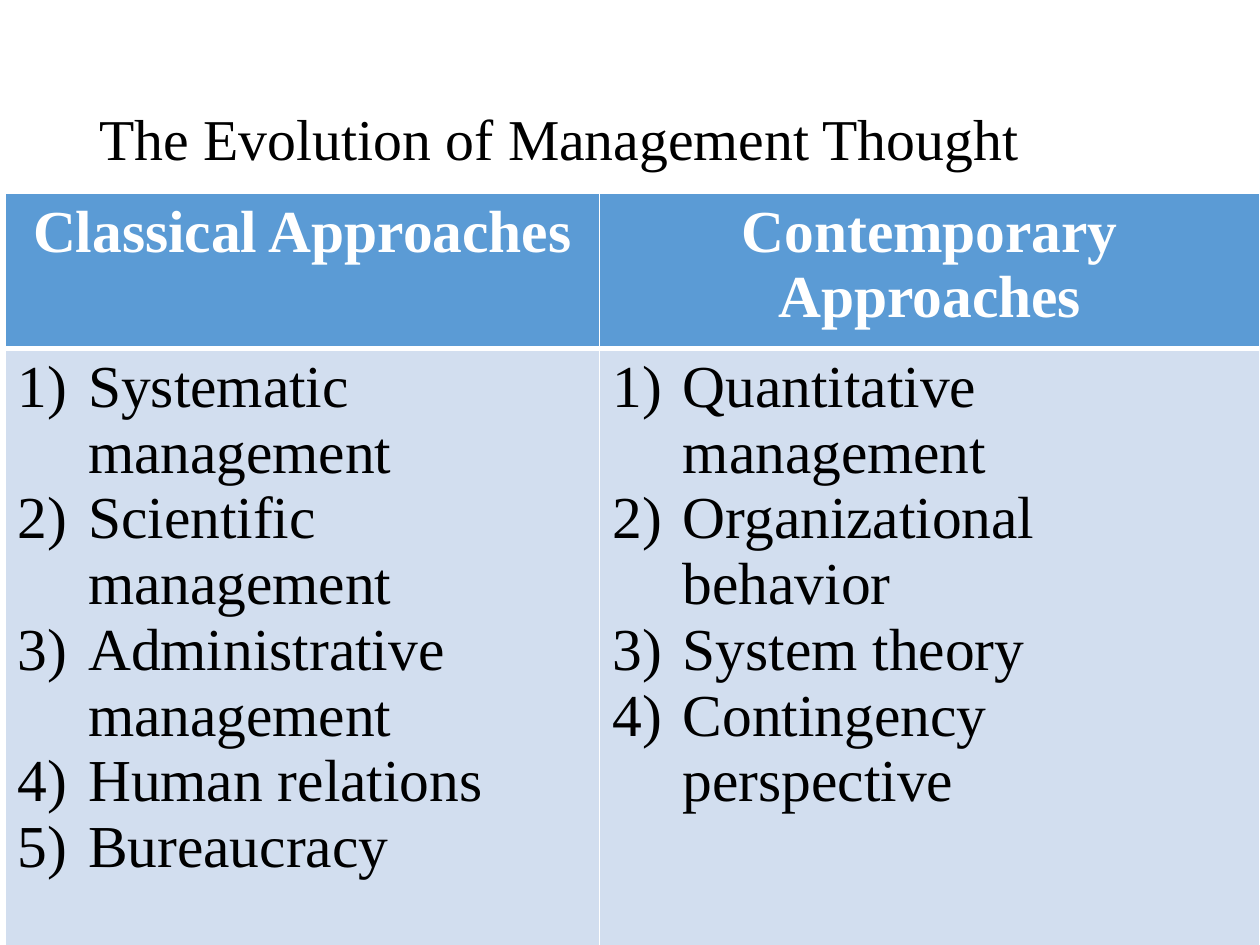
"""Build the slide comparing classical and contemporary management approaches."""
from dataclasses import dataclass

from lxml.etree import SubElement
from pptx import Presentation
from pptx.dml.color import RGBColor
from pptx.enum.text import MSO_ANCHOR, PP_ALIGN
from pptx.oxml.ns import qn
from pptx.util import Inches, Pt

FONT = "Times New Roman"
WHITE, BLACK, HEAD_FILL, BODY_FILL = "FFFFFF", "000000", "5B9BD5", "D2DEEF"
THIN, THICK = 1, 3


@dataclass
class Approach:
    heading: str
    width: float
    items: list[str]


APPROACHES = [
    Approach("Classical Approaches", 4.72, [
        "Systematic management", "Scientific management",
        "Administrative management", "Human relations", "Bureaucracy"]),
    Approach("Contemporary Approaches", 5.24, [
        "Quantitative management", "Organizational behavior",
        "System theory", "Contingency perspective"]),
]
ROW_HEIGHTS = [1.14, 4.79]


def rgb(color: str) -> RGBColor:
    return RGBColor.from_string(color)


def add_run(p, text: str, size: float, color: str, bold: bool = False) -> None:
    r = p.add_run()
    r.text = text
    r.font.name = FONT
    r.font.size = Pt(size)
    r.font.bold = bold
    r.font.color.rgb = rgb(color)


def number_paragraph(p, indent: float) -> None:
    pPr = p._p.get_or_add_pPr()
    pPr.set("marL", str(Inches(indent)))
    pPr.set("indent", str(-Inches(indent)))
    SubElement(pPr, qn("a:buFont"), typeface="+mj-lt")
    SubElement(pPr, qn("a:buAutoNum"), type="arabicParenR")


def style_cell(cell, fill: str, top: float, bottom: float) -> None:
    cell.fill.solid()
    cell.fill.fore_color.rgb = rgb(fill)
    tcPr = cell._tc.get_or_add_tcPr()
    widths = {"lnL": THIN, "lnR": THIN, "lnT": top, "lnB": bottom}
    for i, (side, width) in enumerate(widths.items()):
        ln = SubElement(tcPr, qn(f"a:{side}"), w=str(Pt(width)))
        SubElement(SubElement(ln, qn("a:solidFill")), qn("a:srgbClr"), val=WHITE)
        tcPr.insert(i, ln)


def add_title(s, text: str) -> None:
    sp = s.shapes.add_textbox(Inches(0.69), Inches(0.4), Inches(8.62), Inches(1.45))
    tf = sp.text_frame
    tf.word_wrap = True
    tf.vertical_anchor = MSO_ANCHOR.MIDDLE
    p = tf.paragraphs[0]
    p.line_spacing = 0.9
    add_run(p, text, 33, BLACK)


def add_approach_table(s, approaches: list[Approach]) -> None:
    width = sum(a.width for a in approaches)
    table = s.shapes.add_table(
        len(ROW_HEIGHTS), len(approaches), Inches(0.04), Inches(1.53),
        Inches(width), Inches(sum(ROW_HEIGHTS))).table
    for row, height in zip(table.rows, ROW_HEIGHTS):
        row.height = Inches(height)
    for col, approach in enumerate(approaches):
        table.columns[col].width = Inches(approach.width)
        head, body = table.cell(0, col), table.cell(1, col)
        style_cell(head, HEAD_FILL, THIN, THICK)
        style_cell(body, BODY_FILL, THICK, THIN)
        p = head.text_frame.paragraphs[0]
        p.alignment = PP_ALIGN.CENTER
        add_run(p, approach.heading, 34, WHITE, bold=True)
        tf = body.text_frame
        for i, item in enumerate(approach.items):
            p = tf.add_paragraph() if i else tf.paragraphs[0]
            number_paragraph(p, 0.56)
            add_run(p, item, 34, BLACK)


def main() -> None:
    prs = Presentation()
    prs.slide_width, prs.slide_height = Inches(10), Inches(7.5)
    s = prs.slides.add_slide(prs.slide_layouts[6])
    add_title(s, "The Evolution of Management Thought")
    add_approach_table(s, APPROACHES)
    prs.save("out.pptx")


if __name__ == "__main__":
    main()
